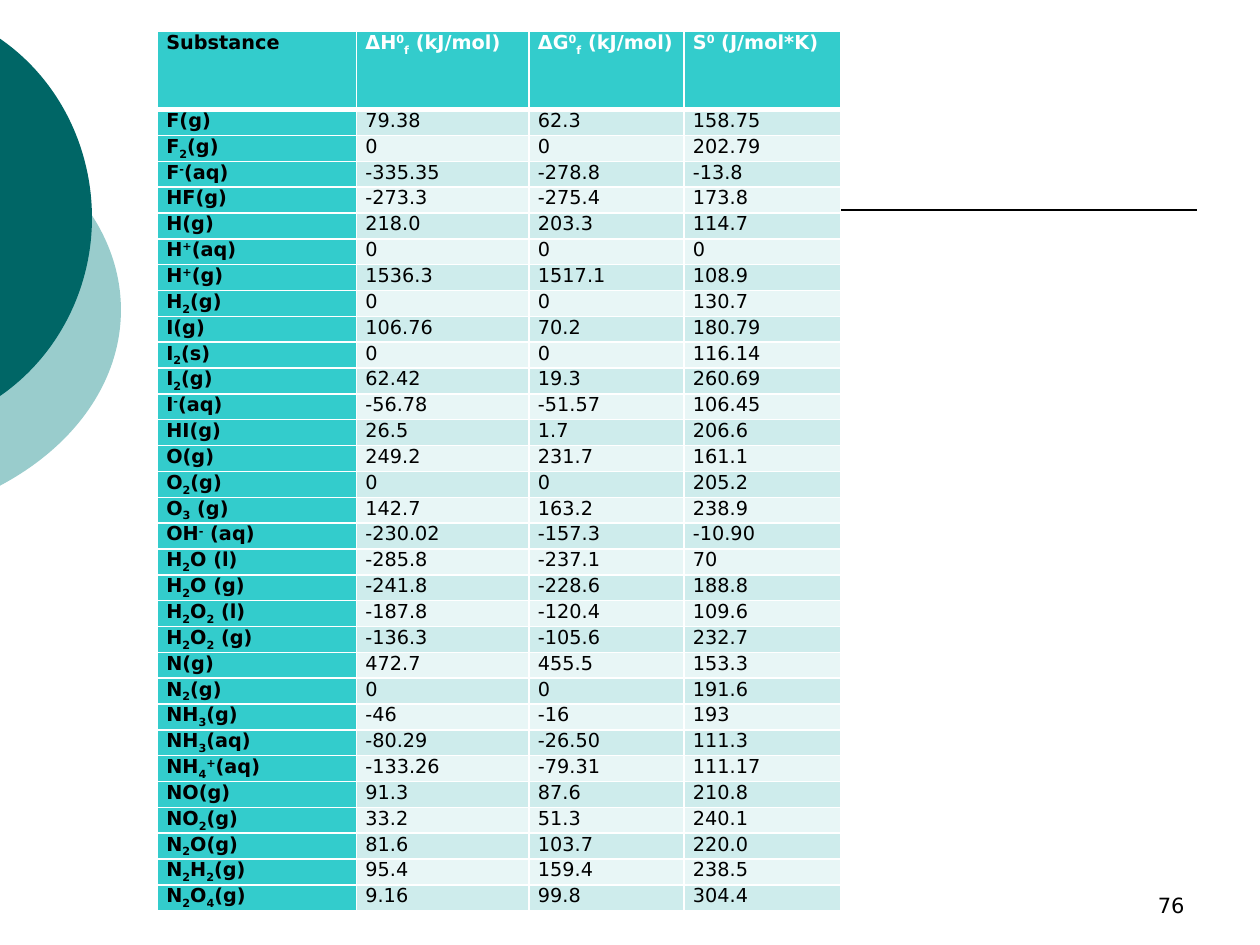
from lxml import etree
from pptx import Presentation
from pptx import util as u
from pptx.dml.color import RGBColor
from pptx.enum import shapes, text
from pptx.oxml import ns

FONT = "DejaVu Sans"
COLORS = {
    "teal": "33CCCC", "dark_teal": "006666", "pale_teal": "99CCCC",
    "odd_row": "CEECEC", "even_row": "E8F6F6",
    "black": "000000", "white": "FFFFFF",
}
SHIFTS = {"^": "30000", "_": "-25000"}  # ^ raises the next character, _ lowers it

HEADINGS = ("Substance", "ΔH^0_f (kJ/mol)", "ΔG^0_f (kJ/mol)", "S^0 (J/mol*K)")
SUBSTANCES = [
    ("F(g)", "79.38", "62.3", "158.75"),
    ("F_2(g)", "0", "0", "202.79"),
    ("F^-(aq)", "-335.35", "-278.8", "-13.8"),
    ("HF(g)", "-273.3", "-275.4", "173.8"),
    ("H(g)", "218.0", "203.3", "114.7"),
    ("H^+(aq)", "0", "0", "0"),
    ("H^+(g)", "1536.3", "1517.1", "108.9"),
    ("H_2(g)", "0", "0", "130.7"),
    ("I(g)", "106.76", "70.2", "180.79"),
    ("I_2(s)", "0", "0", "116.14"),
    ("I_2(g)", "62.42", "19.3", "260.69"),
    ("I^-(aq)", "-56.78", "-51.57", "106.45"),
    ("HI(g)", "26.5", "1.7", "206.6"),
    ("O(g)", "249.2", "231.7", "161.1"),
    ("O_2(g)", "0", "0", "205.2"),
    ("O_3 (g)", "142.7", "163.2", "238.9"),
    ("OH^- (aq)", "-230.02", "-157.3", "-10.90"),
    ("H_2O (l)", "-285.8", "-237.1", "70"),
    ("H_2O (g)", "-241.8", "-228.6", "188.8"),
    ("H_2O_2 (l)", "-187.8", "-120.4", "109.6"),
    ("H_2O_2 (g)", "-136.3", "-105.6", "232.7"),
    ("N(g)", "472.7", "455.5", "153.3"),
    ("N_2(g)", "0", "0", "191.6"),
    ("NH_3(g)", "-46", "-16", "193"),
    ("NH_3(aq)", "-80.29", "-26.50", "111.3"),
    ("NH_4^+(aq)", "-133.26", "-79.31", "111.17"),
    ("NO(g)", "91.3", "87.6", "210.8"),
    ("NO_2(g)", "33.2", "51.3", "240.1"),
    ("N_2O(g)", "81.6", "103.7", "220.0"),
    ("N_2H_2(g)", "95.4", "159.4", "238.5"),
    ("N_2O_4(g)", "9.16", "99.8", "304.4"),
]


def color(name):
    return RGBColor.from_string(COLORS[name])


def split_shifts(words):
    """Return [characters, shift] pieces of marked-up words."""
    pieces, shift = [], None
    for char in words:
        if char in SHIFTS:
            shift = SHIFTS[char]
        elif shift or not pieces or pieces[-1][1]:
            pieces.append([char, shift])
            shift = None
        else:
            pieces[-1][0] += char
    return pieces


def write_text(frame, words, size=11, tint="black", bold=False, align=text.PP_ALIGN.LEFT):
    para = frame.paragraphs[0]
    para.alignment = align
    for chars, shift in split_shifts(words):
        span = para.add_run()
        span.text = chars
        span.font.name, span.font.size, span.font.bold = FONT, u.Pt(size), bold
        span.font.color.rgb = color(tint)
        if shift:
            span.font._element.set("baseline", shift)


def add_cut_ellipse(page, left, top, width, height, upper, tint):
    """Draw an ellipse cut at the slide's left edge.

    upper holds the start, two control points and right tip of its upper curve,
    measured from the slide's corner; the lower curve mirrors it.
    """
    middle = top + height / 2
    lower = [(x, 2 * middle - y) for x, y in reversed(upper)]
    curves = [upper[1:], lower[1:]]
    builder = page.shapes.build_freeform(*map(u.Inches, upper[0]), scale=1.0)
    builder.add_line_segments(
        [tuple(map(u.Inches, curve[-1])) for curve in curves], close=True)
    shape = builder.convert_to_shape()
    # Frame of the whole ellipse, with the outline measured from its corner
    shape.left, shape.top, shape.width, shape.height = map(
        u.Inches, (left, top, width, height))
    outline = next(shape._element.iter(ns.qn("a:path")))
    outline.set("w", str(shape.width))
    outline.set("h", str(shape.height))
    for step in list(outline):
        outline.remove(step)
    for tag, points in [("moveTo", upper[:1])] + [("cubicBezTo", c) for c in curves]:
        step = etree.SubElement(outline, ns.qn(f"a:{tag}"))
        for x, y in points:
            etree.SubElement(step, ns.qn("a:pt"),
                             x=str(u.Inches(x - left)), y=str(u.Inches(y - top)))
    etree.SubElement(outline, ns.qn("a:close"))
    shape.shadow.inherit = False
    shape.fill.solid()
    shape.fill.fore_color.rgb = color(tint)
    shape.line.fill.background()


def add_backdrop(page):
    # Circles at the left edge
    add_cut_ellipse(page, -3.54, 0.75, 4.5, 3.42,
                    [(-0.01, 1.06), (0.6, 1.38), (0.96, 1.9), (0.96, 2.46)], "pale_teal")
    add_cut_ellipse(page, -2.65, 0, 3.38, 3.45,
                    [(-0.01, 0.3), (0.46, 0.62), (0.73, 1.16), (0.73, 1.73)], "dark_teal")
    # Title rule, partly behind the table
    height = u.Inches(5 / 3)
    rule = page.shapes.add_connector(
        shapes.MSO_CONNECTOR.STRAIGHT, u.Inches(1.5), height, u.Inches(9.5), height)
    rule.line.color.rgb = color("black")
    rule.line.width = u.Pt(1)
    etree.SubElement(rule._element.spPr, ns.qn("a:effectLst"))


def set_borders(cell, top=1, bottom=1):
    """Give the cell white borders, with widths in points."""
    props = cell._tc.get_or_add_tcPr()
    widths = {"lnL": 1, "lnR": 1, "lnT": top, "lnB": bottom}
    for place, (tag, width) in enumerate(widths.items()):
        border = etree.Element(ns.qn(f"a:{tag}"), w=str(u.Pt(width)))
        fill = etree.SubElement(border, ns.qn("a:solidFill"))
        etree.SubElement(fill, ns.qn("a:srgbClr"), val=COLORS["white"])
        props.insert(place, border)


def format_cell(cell, words, row, column):
    header = row == 0
    cell.margin_left = cell.margin_right = u.Inches(0.07)
    cell.margin_top = cell.margin_bottom = 0
    cell.fill.solid()
    band = "odd_row" if row % 2 else "even_row"
    cell.fill.fore_color.rgb = color("teal" if header or column == 0 else band)
    set_borders(cell, top=3 if row == 1 else 1, bottom=3 if header else 1)
    write_text(cell.text_frame, words, bold=header or column == 0,
               tint="white" if header and column else "black")


def add_substance_table(page, left, top, height):
    widths, header_height = (1.58, 1.37, 1.23, 1.24), 0.62
    rows = [HEADINGS, *SUBSTANCES]
    table = page.shapes.add_table(
        len(rows), len(widths), u.Inches(left), u.Inches(top),
        u.Inches(sum(widths)), u.Inches(height)).table
    table.first_row = table.horz_banding = False
    for column, width in zip(table.columns, widths):
        column.width = u.Inches(width)
    row_height = (height - header_height) / len(SUBSTANCES)
    for row, values in enumerate(rows):
        table.rows[row].height = u.Inches(row_height if row else header_height)
        for column, words in enumerate(values):
            format_cell(table.cell(row, column), words, row, column)


def add_page_number(page, left, top, width, height):
    box = page.shapes.add_textbox(*map(u.Inches, (left, top, width, height)))
    box.text_frame.word_wrap = True
    box.text_frame.vertical_anchor = text.MSO_ANCHOR.BOTTOM
    write_text(box.text_frame, "76", size=12, align=text.PP_ALIGN.RIGHT)


def main():
    deck = Presentation()
    deck.slide_width, deck.slide_height = u.Inches(10), u.Inches(7.5)
    page = deck.slides.add_slide(deck.slide_layouts[6])
    add_backdrop(page)
    add_substance_table(page, 1.25, 0.25, 6.99)
    add_page_number(page, 7.17, 6.83, 2.33, 0.5)
    deck.save("out.pptx")


if __name__ == "__main__":
    main()
